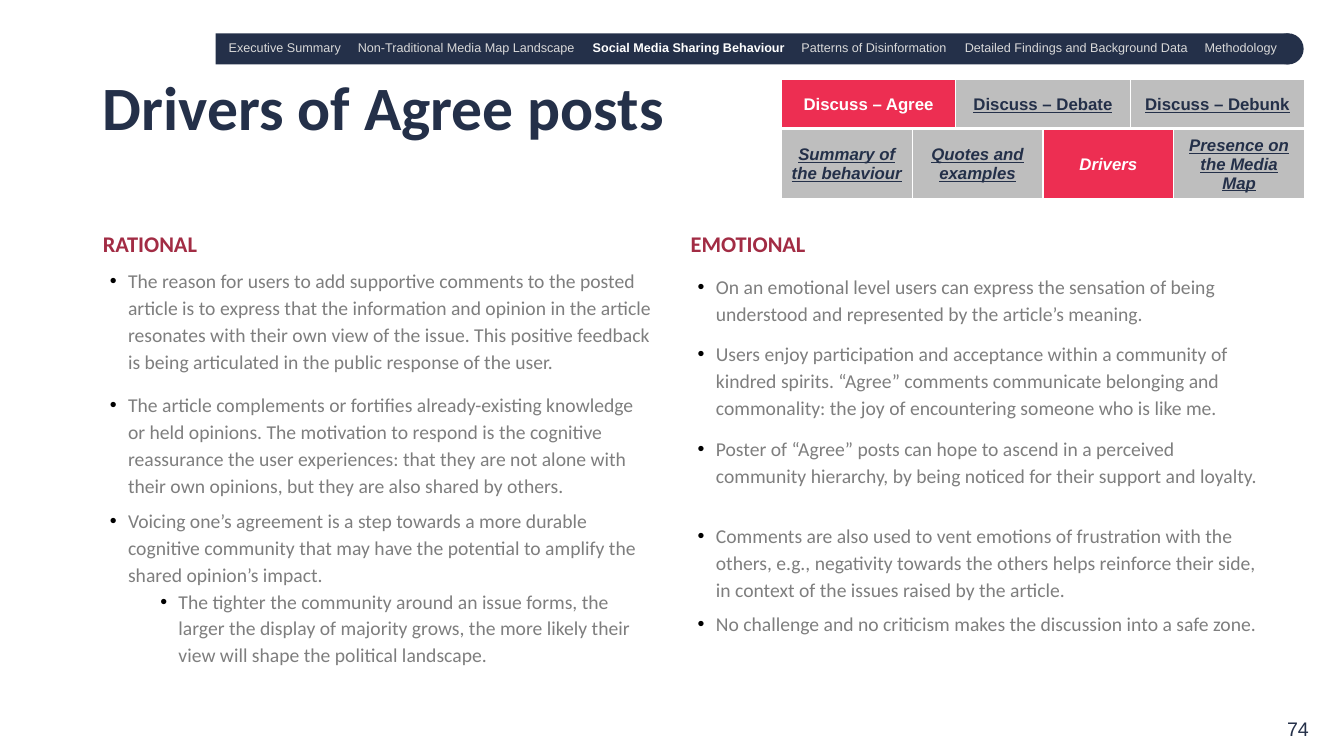
from lxml import etree
from pptx import Presentation
from pptx import util as u
from pptx.dml.color import RGBColor
from pptx.enum import shapes, text
from pptx.oxml import ns

# Content
TITLE = "Drivers of Agree posts"
PAGE_NUMBER = "74"
SECTIONS = ["Executive Summary", "Non-Traditional Media Map Landscape",
            "Social Media Sharing Behaviour", "Patterns of Disinformation",
            "Detailed Findings and Background Data", "Methodology"]
CURRENT_SECTION = "Social Media Sharing Behaviour"
SECTION_TABS = [1.28, 3.61, 5.68, 7.3, 9.68]

# Each menu: labels, current label, italic, top, height
MENUS = [
    (["Discuss – Agree", "Discuss – Debate", "Discuss – Debunk"],
     "Discuss – Agree", False, 0.79, 0.49),
    (["Summary of the behaviour", "Quotes and examples", "Drivers",
      "Presence on the Media Map"], "Drivers", True, 1.28, 0.55),
]

# Each point: level, points before, points after, wording
RATIONAL = [
    (0, 6, 6, "The reason for users to add supportive comments to the posted article is to express "
     "that the information and opinion in the article resonates with their own view of the issue. "
     "This positive feedback is being articulated in the public response of the user."),
    (0, 6, 6, "The article complements or fortifies already-existing knowledge or held opinions. "
     "The motivation to respond is the cognitive reassurance the user experiences: that they are "
     "not alone with their own opinions, but they are also shared by others."),
    (0, 0, 0, "Voicing one’s agreement is a step towards a more durable cognitive community that "
     "may have the potential to amplify the shared opinion’s impact."),
    (1, 0, 0, "The tighter the community around an issue forms, the larger the display of majority "
     "grows, the more likely their view will shape the political landscape."),
]
EMOTIONAL = [
    (0, 10, 0, "On an emotional level users can express the sensation of being understood and "
     "represented by the article’s meaning."),
    (0, 10, 0, "Users enjoy participation and acceptance within a community of kindred spirits. "
     "“Agree” comments communicate belonging and commonality: the joy of encountering someone "
     "who is like me."),
    (0, 10, 0, "Poster of “Agree” posts can hope to ascend in a perceived community hierarchy, "
     "by being noticed for their support and loyalty."),
    (0, 24, 0, "Comments are also used to vent emotions of frustration with the others, e.g., "
     "negativity towards the others helps reinforce their side, in context of the issues raised "
     "by the article."),
    (0, 5, 0, "No challenge and no criticism makes the discussion into a safe zone."),
]
COLUMNS = [("RATIONAL", RATIONAL, (0.92, 2.2, 5.67, 4.07)),
           ("EMOTIONAL", EMOTIONAL, (6.75, 2.2, 5.86, 3.99))]

COLORS = {"navy": "243049", "red": "ED2E52", "wine": "A22C44", "body": "7E7E7E",
          "idle": "7F7F7F", "pale": "D9D9D9", "white": "FFFFFF", "black": "000000"}

# Grid, in inches
WIDTH, HEIGHT = 13.33, 7.5
RIGHT = 12.94
MENU_WIDTH = 5.19
BAR_LEFT, BAR_TOP, BAR_HEIGHT = 2.14, 0.33, 0.31


def place(*lengths):
    return [u.Inches(length) for length in lengths]


def put(shape, *lengths):
    shape.left, shape.top, shape.width, shape.height = place(*lengths)


def add_span(para, wording, size, color, font="Arial", bold=False, italic=False, underline=False):
    span = para.add_run()
    span.text = wording
    face = span.font
    face.name, face.size, face.bold = font, u.Pt(size), bold
    face.italic, face.underline = italic, underline
    face.color.rgb = RGBColor.from_string(COLORS[color])


def add_node(parent, tag, **attributes):
    return etree.SubElement(parent, ns.qn(tag), attributes)


def space(para, before, after=0):
    para.line_spacing = 1.14
    para.space_before, para.space_after = u.Pt(before), u.Pt(after)


def indent(para, left, hanging):
    properties = para._p.get_or_add_pPr()
    properties.set("marL", str(u.Inches(left)))
    properties.set("indent", str(u.Inches(hanging)))
    return properties


def add_bullet(para, level):
    para.level = level
    properties = indent(para, 0.25 + 0.5 * level, -0.18)
    add_node(add_node(properties, "a:buClr"), "a:srgbClr", val=COLORS["black"])
    add_node(properties, "a:buFont", typeface="Arial")
    add_node(properties, "a:buChar", char="•")


def fill_column(box, heading, points):
    frame = box.text_frame
    frame.auto_size = text.MSO_AUTO_SIZE.NONE
    frame.vertical_anchor = text.MSO_ANCHOR.TOP
    para = frame.paragraphs[0]
    add_node(indent(para, 0, 0), "a:buNone")
    space(para, 0)
    add_span(para, heading, 16, "wine", "Calibri", bold=True)
    for level, before, after, wording in points:
        para = frame.add_paragraph()
        add_bullet(para, level)
        space(para, before, after)
        add_span(para, wording, 14, "body", "Calibri")


def style_cell(cell, label, current, italic):
    cell.fill.solid()
    cell.fill.fore_color.rgb = RGBColor.from_string(COLORS["red" if current else "idle"])
    properties = cell._tc.get_or_add_tcPr()
    if not current:
        add_node(properties.find(".//" + ns.qn("a:srgbClr")), "a:alpha", val="50000")
    for index, (side, points) in enumerate([("L", 1), ("R", 1), ("T", 1), ("B", 3)]):
        border = etree.Element(ns.qn("a:ln" + side), w=str(u.Pt(points)))
        add_node(add_node(border, "a:solidFill"), "a:srgbClr", val=COLORS["white"])
        properties.insert(index, border)
    cell.vertical_anchor = text.MSO_ANCHOR.MIDDLE
    para = cell.text_frame.paragraphs[0]
    para.alignment = text.PP_ALIGN.CENTER
    add_span(para, label, 12, "white" if current else "navy", bold=True,
             italic=italic, underline=not current)


def add_menu(page, labels, current, italic, top, height):
    table = page.shapes.add_table(
        1, len(labels), *place(RIGHT - MENU_WIDTH, top, MENU_WIDTH, height)).table
    for column, label in enumerate(labels):
        table.columns[column].width = u.Inches(MENU_WIDTH / len(labels))
        style_cell(table.cell(0, column), label, label == current, italic)


def add_section_bar(page):
    parts = [(shapes.MSO_SHAPE.RECTANGLE, BAR_LEFT, 10.64),
             (shapes.MSO_SHAPE.OVAL, 12.62, BAR_HEIGHT)]
    for kind, left, width in parts:
        part = page.shapes.add_shape(kind, *place(left, BAR_TOP, width, BAR_HEIGHT))
        part.shadow.inherit = False
        part.fill.solid()
        part.fill.fore_color.rgb = RGBColor.from_string(COLORS["navy"])
        part.line.fill.background()
    frame = page.shapes.add_textbox(*place(2.17, 0.34, 10.71, 0.27)).text_frame
    frame.word_wrap = True
    frame.vertical_anchor = text.MSO_ANCHOR.MIDDLE
    para = frame.paragraphs[0]
    stops = add_node(para._p.get_or_add_pPr(), "a:tabLst")
    for stop in SECTION_TABS:
        add_node(stops, "a:tab", pos=str(u.Inches(stop)), algn="l")
    for index, section in enumerate(SECTIONS):
        current = section == CURRENT_SECTION
        add_span(para, ("\t" if index else "") + section, 9,
                 "white" if current else "pale", bold=current)


def main():
    deck = Presentation()
    deck.slide_width, deck.slide_height = place(WIDTH, HEIGHT)
    page = deck.slides.add_slide(deck.slide_layouts[3])
    title, *bodies = page.placeholders

    # Title
    put(title, 0.92, 0.4, 11.5, 2.14)
    frame = title.text_frame
    frame.auto_size = text.MSO_AUTO_SIZE.NONE
    frame.vertical_anchor = text.MSO_ANCHOR.TOP
    frame.margin_top = u.Inches(0.37)
    para = frame.paragraphs[0]
    para.alignment, para.line_spacing = text.PP_ALIGN.LEFT, 0.9
    add_span(para, TITLE, 44, "navy", "Calibri", bold=True)

    # Two columns of drivers
    for box, (heading, points, area) in zip(bodies, COLUMNS):
        put(box, *area)
        fill_column(box, heading, points)

    # Navigation
    add_section_bar(page)
    for menu in MENUS:
        add_menu(page, *menu)

    # Page number
    number = page.shapes.add_textbox(*place(11.9, 7.06, 1.18, 0.34)).text_frame
    number.word_wrap = True
    number.paragraphs[0].alignment = text.PP_ALIGN.RIGHT
    add_span(number.paragraphs[0], PAGE_NUMBER, 14, "navy")

    deck.save("out.pptx")


if __name__ == "__main__":
    main()
